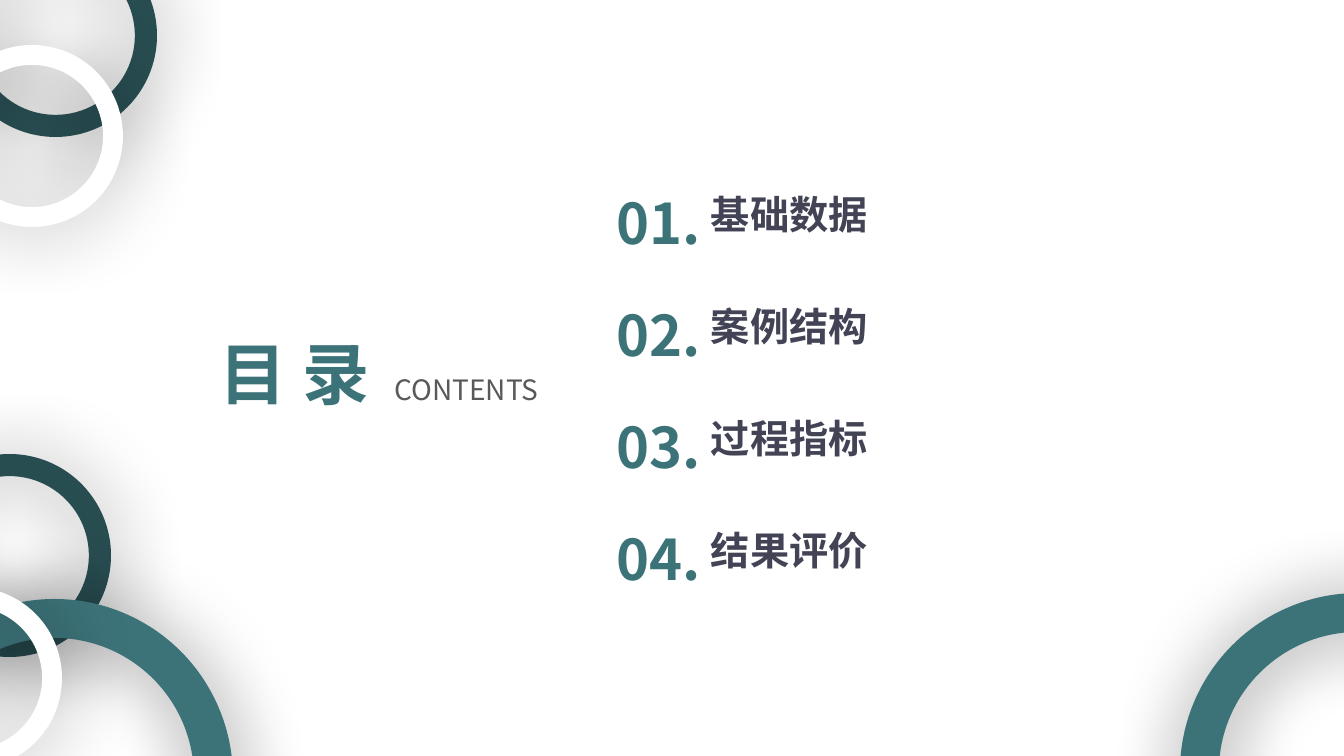
from dataclasses import dataclass
from lxml import etree
from pptx import Presentation
from pptx.dml.color import RGBColor
from pptx.enum.shapes import MSO_SHAPE
from pptx.enum.text import MSO_ANCHOR, MSO_AUTO_SIZE, PP_ALIGN
from pptx.oxml.ns import qn
from pptx.util import Pt

DONUT = MSO_SHAPE.DONUT
MIDDLE = MSO_ANCHOR.MIDDLE
NO_FIT = MSO_AUTO_SIZE.NONE
LEFT, CENTER = PP_ALIGN.LEFT, PP_ALIGN.CENTER


@dataclass(frozen=True)
class Theme:
    font: str = "Noto Sans CJK SC"
    teal: str = "3C7379"
    dark: str = "284D51"
    white: str = "FFFFFF"
    ink: str = "424456"
    gray: str = "595959"
    title: int = 48
    subtitle: int = 20
    number: int = 40
    label: int = 28


T = Theme()
TITLE, SUBTITLE = "目 录", "CONTENTS"
SECTIONS = ["基础数据", "案例结构", "过程指标", "结果评价"]
SMALL, MEDIUM, LARGE = (182, T.white), (203, T.dark), (357, T.teal)
RINGS = [
    (-92, 454, MEDIUM),
    (-124, 599, LARGE),
    (-120, 587, SMALL),
    (-46, -66, MEDIUM),
    (1180, 593, LARGE),
    (-59, 45, SMALL),
]
RING_WIDTH = 0.109
SHADOW = {"blurRad": Pt(55), "dist": Pt(3), "dir": 45 * 60000}
SHADOW_ALPHA = 40000
NUMBER_X, NUMBER_Y = 607, 183
LABEL_X, LABEL_Y = 701, 185
ROW_STEP = 112


def px(n):
    return round(n * 914400 / 100.8)


def put_text(s, text, box, size, color, bold=True, align=LEFT, shape=None):
    box = [px(n) for n in box]
    sp = shape or s.shapes.add_textbox(*box)
    sp.left, sp.top, sp.width, sp.height = box
    tf = sp.text_frame
    tf.auto_size, tf.word_wrap, tf.vertical_anchor = NO_FIT, False, MIDDLE
    p = tf.paragraphs[0]
    p.alignment = align
    r = p.add_run()
    r.text = text
    r.font.name, r.font.size, r.font.bold = T.font, Pt(size), bold
    r.font.color.rgb = RGBColor.from_string(color)
    etree.SubElement(r.font._element, qn("a:ea"), typeface=T.font)


def add_ring(s, x, y, size, color):
    sp = s.shapes.add_shape(DONUT, px(x), px(y), px(size), px(size))
    sp.adjustments[0] = RING_WIDTH
    sp.fill.solid()
    sp.fill.fore_color.rgb = RGBColor.from_string(color)
    sp.line.fill.background()
    sp.shadow.inherit = False
    effects = sp._element.spPr.find(qn("a:effectLst"))
    shadow = etree.SubElement(effects, qn("a:outerShdw"), algn="tl", rotWithShape="0")
    for key, value in SHADOW.items():
        shadow.set(key, str(value))
    black = etree.SubElement(shadow, qn("a:srgbClr"), val="000000")
    etree.SubElement(black, qn("a:alpha"), val=str(SHADOW_ALPHA))


def main():
    prs = Presentation()
    prs.slide_width, prs.slide_height = px(1344), px(756)
    s = prs.slides.add_slide(prs.slide_layouts[5])

    put_text(s, TITLE, (209, 327, 171, 92), T.title, T.teal, align=CENTER, shape=s.shapes.title)
    put_text(s, SUBTITLE, (384, 367, 165, 44), T.subtitle, T.gray, bold=False, align=CENTER)

    for i, section in enumerate(SECTIONS):
        dy = i * ROW_STEP
        put_text(s, section, (LABEL_X, LABEL_Y + dy, 177, 57), T.label, T.ink)
        put_text(s, f"{i + 1:02}.", (NUMBER_X, NUMBER_Y + dy, 105, 78), T.number, T.teal)

    for x, y, (size, color) in RINGS:
        add_ring(s, x, y, size, color)

    prs.save("out.pptx")


if __name__ == "__main__":
    main()
